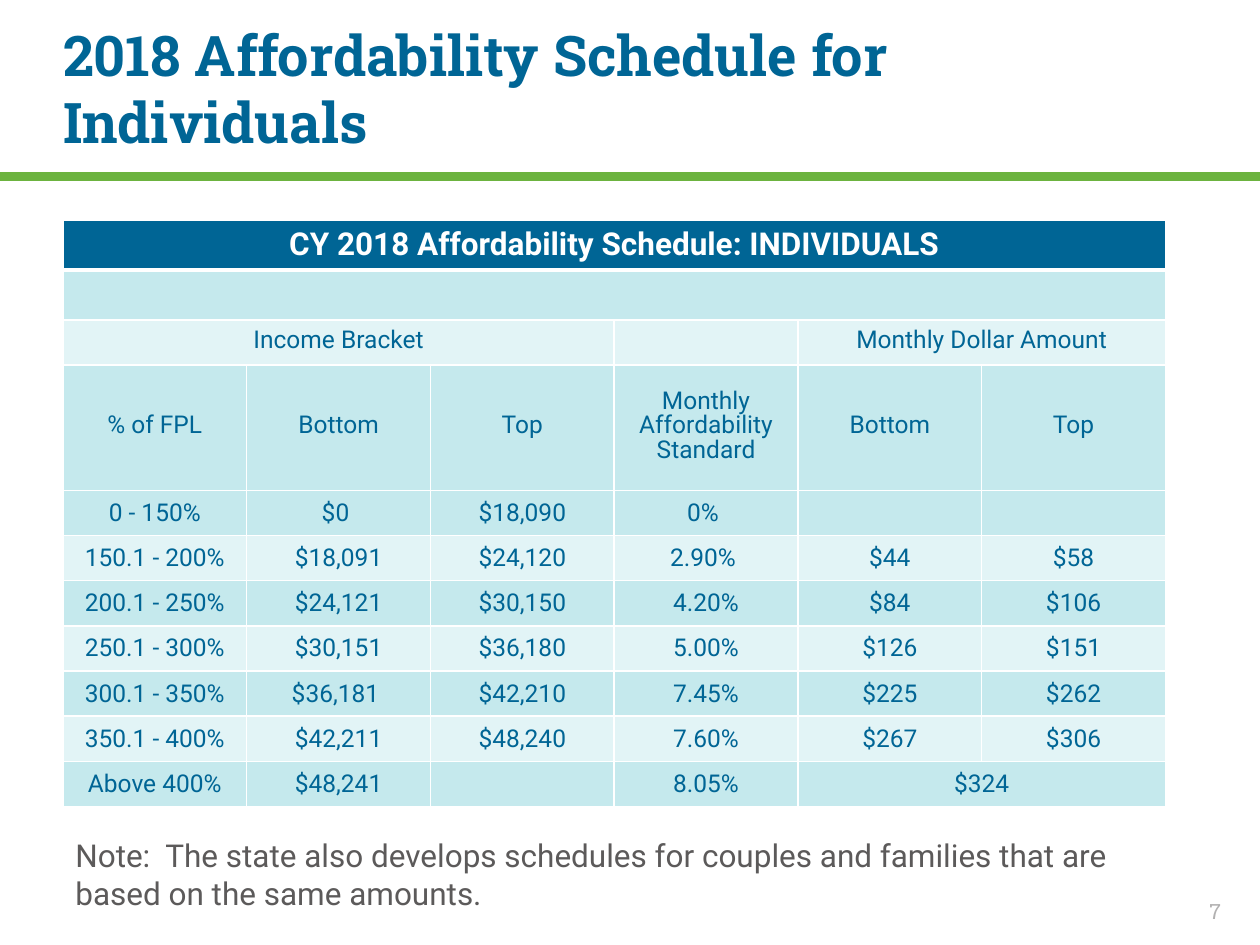
from lxml import etree
from pptx import Presentation
from pptx.dml.color import RGBColor
from pptx.enum import shapes, text
from pptx.oxml import ns
from pptx.util import Pt

BLUE = RGBColor(0x00, 0x65, 0x95)
GREEN = RGBColor(0x6C, 0xB3, 0x3F)
TEAL = RGBColor(0x6F, 0xC9, 0xD3)
GRAY = RGBColor(0x5C, 0x5A, 0x5A)
PALE = RGBColor(0xB2, 0xB1, 0xB1)
WHITE = RGBColor(0xFF, 0xFF, 0xFF)
SANS, SLAB = "Roboto", "Roboto Slab"

TITLE = "2018 Affordability Schedule for Individuals"
NOTE = ("Note:  The state also develops schedules for couples and families "
        "that are based on the same amounts.")
PAGE = "7"
ROWS = [
    ["CY 2018 Affordability Schedule: INDIVIDUALS", "", "", "", "", ""],
    ["", "", "", "", "", ""],
    ["Income Bracket", "", "", "", "Monthly Dollar Amount", ""],
    ["% of FPL", "Bottom", "Top", "Monthly Affordability Standard", "Bottom", "Top"],
    ["0 - 150%", "$0 ", "$18,090", "0% ", "", ""],
    ["150.1 - 200%", "$18,091", "$24,120", "2.90% ", "$44", "$58"],
    ["200.1 - 250%", "$24,121", "$30,150", "4.20%", "$84", "$106"],
    ["250.1 - 300%", "$30,151", "$36,180", "5.00%", "$126", "$151"],
    ["300.1 - 350%", "$36,181 ", "$42,210", "7.45%", "$225", "$262"],
    ["350.1 - 400%", "$42,211", "$48,240", "7.60%", "$267", "$306"],
    ["Above 400%", "$48,241", "", "8.05%", "$324", ""],
]
SPANS = [(0, 0, 5), (1, 0, 5), (2, 0, 2), (2, 4, 5), (10, 4, 5)]  # row, first, last
TALL = {0: 28, 1: 28.5, 3: 71.5}  # heights of the rows that differ
LOW = 25.85
LIGHT = {2, 5, 7, 9}  # rows with the lighter tint
WIDE = 630


def write(para, words, size, font, color, bold=False):
    run = para.add_run()
    run.text = words
    run.font.size = Pt(size)
    run.font.name = font
    run.font.bold = bold
    run.font.color.rgb = color


def border(cell, row):
    """Draw white cell edges, heavier under the heading row."""
    props = cell._tc.get_or_add_tcPr()
    for i, side in enumerate("LRTB"):
        thick = 3 if (row, side) in ((0, "B"), (1, "T")) else 1
        line = etree.Element(ns.qn(f"a:ln{side}"), w=str(Pt(thick)))
        fill = etree.SubElement(line, ns.qn("a:solidFill"))
        etree.SubElement(fill, ns.qn("a:srgbClr"), val=str(WHITE))
        props.insert(i, line)


def tint(cell, row):
    cell.fill.solid()
    cell.fill.fore_color.rgb = TEAL if row else BLUE
    if row:
        color = cell._tc.tcPr.find(".//" + ns.qn("a:srgbClr"))
        share = 20 if row in LIGHT else 40
        etree.SubElement(color, ns.qn("a:alpha"), val=str(share * 1000))


def fill_cell(cell, row, words):
    tint(cell, row)
    border(cell, row)
    cell.vertical_anchor = text.MSO_ANCHOR.MIDDLE if row else text.MSO_ANCHOR.TOP
    if row > 3 or not words:
        cell.margin_left = cell.margin_right = 0
        cell.margin_top = cell.margin_bottom = 0
    if words:
        para = cell.text_frame.paragraphs[0]
        para.alignment = text.PP_ALIGN.CENTER
        if row in (2, 3):
            para.line_spacing = Pt(14)
        if row:
            write(para, words, 14, SANS, BLUE)
        else:
            write(para, words, 18, SANS, WHITE, True)


def add_grid(slide):
    high = [TALL.get(i, LOW) for i in range(len(ROWS))]
    count = len(ROWS[0])
    grid = slide.shapes.add_table(len(ROWS), count, Pt(36), Pt(126),
                                  Pt(WIDE), Pt(sum(high))).table
    grid.first_row = grid.horz_banding = False
    for col in grid.columns:
        col.width = Pt(WIDE / count)
    for r, row in enumerate(ROWS):
        grid.rows[r].height = Pt(high[r])
        for c, words in enumerate(row):
            fill_cell(grid.cell(r, c), r, words)
    for r, first, last in SPANS:
        grid.cell(r, first).merge(grid.cell(r, last))


def add_title(slide):
    title = slide.shapes.title
    title.left, title.top, title.width, title.height = Pt(36), Pt(10), Pt(572.5), Pt(80)
    frame = title.text_frame
    frame.auto_size = text.MSO_AUTO_SIZE.NONE
    frame.vertical_anchor = text.MSO_ANCHOR.MIDDLE
    frame.margin_left = frame.margin_right = frame.margin_top = frame.margin_bottom = 0
    frame.paragraphs[0].alignment = text.PP_ALIGN.LEFT
    write(frame.paragraphs[0], TITLE, 32, SLAB, BLUE, True)


def add_rule(slide):
    y = Pt(100.8)
    rule = slide.shapes.add_connector(shapes.MSO_CONNECTOR.STRAIGHT, 0, y, Pt(720), y)
    rule.line.color.rgb = GREEN
    rule.line.width = Pt(5)
    etree.SubElement(rule._element.spPr, ns.qn("a:effectLst"))


def add_text(slide, box, words, size, font, color, wrap=True):
    frame = slide.shapes.add_textbox(*map(Pt, box)).text_frame
    frame.word_wrap = wrap
    write(frame.paragraphs[0], words, size, font, color)
    return frame


def main():
    deck = Presentation()
    deck.slide_width, deck.slide_height = Pt(720), Pt(540)
    slide = deck.slides.add_slide(deck.slide_layouts[5])
    add_rule(slide)
    add_title(slide)
    add_grid(slide)
    page = add_text(slide, (684, 510.5, 20, 20), PAGE, 12, SLAB, PALE, False)
    page.vertical_anchor = text.MSO_ANCHOR.MIDDLE
    page.paragraphs[0].alignment = text.PP_ALIGN.RIGHT
    add_text(slide, (36, 474, 648, 51), NOTE, 18, SANS, GRAY)
    deck.save("out.pptx")


if __name__ == "__main__":
    main()
